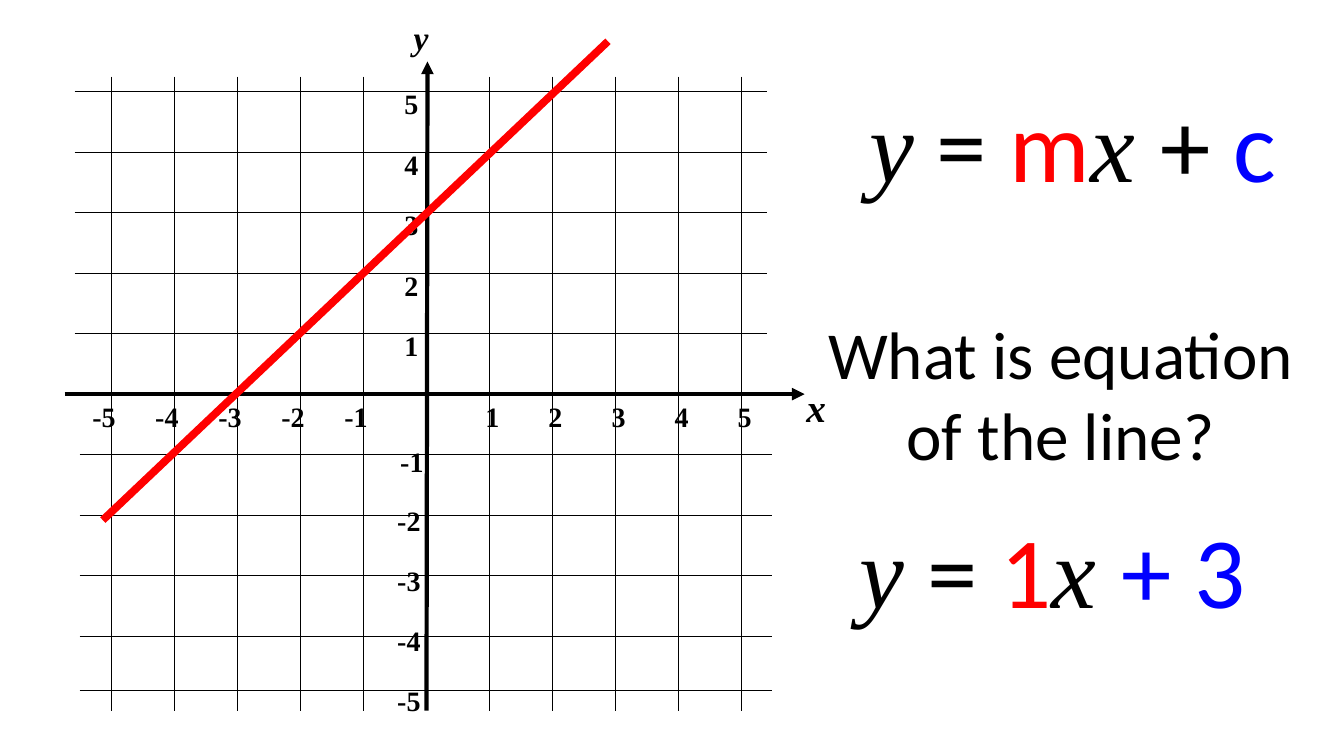
import pptx
import pptx.dml.color
import pptx.enum.shapes
import pptx.enum.text
import pptx.oxml.ns
import pptx.util
from lxml import etree

Inches = pptx.util.Inches
Pt = pptx.util.Pt
Align = pptx.enum.text.PP_ALIGN

BLACK = pptx.dml.color.RGBColor(0x00, 0x00, 0x00)
RED = pptx.dml.color.RGBColor(0xFF, 0x00, 0x00)
BLUE = pptx.dml.color.RGBColor(0x00, 0x00, 0xFF)

ORIGIN_X, ORIGIN_Y = 4.23, 3.91
STEP_X, STEP_Y = 0.625, 0.6


class GraphSlide:
    SANS = "Calibri"
    SERIF = "Times New Roman"

    def __init__(self, slide):
        self.slide = slide

    def line(self, start, end, width, color=BLACK, arrow=False):
        connector = self.slide.shapes.add_connector(
            pptx.enum.shapes.MSO_CONNECTOR.STRAIGHT,
            *(Inches(value) for value in (*start, *end)))
        connector.line.color.rgb = color
        connector.line.width = Pt(width)
        qn = pptx.oxml.ns.qn
        if arrow:
            etree.SubElement(connector.line._get_or_add_ln(),
                             qn("a:tailEnd"), type="triangle")
        etree.SubElement(connector._element.spPr, qn("a:effectLst"))

    def run(self, paragraph, text, size, color=BLACK, font=SANS,
            bold=False, italic=False):
        run = paragraph.add_run()
        run.text = text
        run.font.size = Pt(size)
        run.font.name = font
        run.font.color.rgb = color
        run.font.bold = bold
        run.font.italic = italic

    def text_box(self, left, top, width, height, align, inset=None):
        """Add a wrapping text box and return its first paragraph."""
        box = self.slide.shapes.add_textbox(
            Inches(left), Inches(top), Inches(width), Inches(height))
        frame = box.text_frame
        frame.word_wrap = True
        if inset is not None:
            frame.margin_left = frame.margin_right = Inches(inset)
            frame.margin_top = frame.margin_bottom = Inches(inset)
        frame.paragraphs[0].alignment = align
        return frame.paragraphs[0]

    def axis_label(self, text, left, top, width, height, size=20,
                   align=Align.LEFT, italic=False):
        paragraph = self.text_box(left, top, width, height, align, 0.04)
        self.run(paragraph, text, size, font=self.SERIF, bold=True, italic=italic)

    def equation(self, left, top, width, height, align, parts):
        """Add an equation from (text, colour) parts; variables are serif italic."""
        paragraph = self.text_box(left, top, width, height, align)
        for text, color in parts:
            variable = text.strip() in ("x", "y")
            self.run(paragraph, text, 72, color,
                     self.SERIF if variable else self.SANS, italic=variable)

    def question(self, text, left, top, width, height):
        title = self.slide.shapes.title
        title.left, title.top = Inches(left), Inches(top)
        title.width, title.height = Inches(width), Inches(height)
        frame = title.text_frame
        frame.word_wrap = True
        frame.auto_size = pptx.enum.text.MSO_AUTO_SIZE.NONE
        frame.vertical_anchor = pptx.enum.text.MSO_ANCHOR.TOP
        frame.paragraphs[0].alignment = Align.CENTER
        self.run(frame.paragraphs[0], text, 48)


def draw_grid(graph):
    graph.line((ORIGIN_X, 7.05), (ORIGIN_X + 0.01, 0.61), 3, arrow=True)
    graph.line((0.64, ORIGIN_Y), (7.98, ORIGIN_Y), 3, arrow=True)
    for n in (*range(-5, 0), *range(1, 6)):
        x = ORIGIN_X + n * STEP_X
        graph.line((x, 0.76), (x, 7.05), 0.25 if n > 0 else 0.75)
        y = 6.85 if n == -5 else ORIGIN_Y - n * STEP_Y
        left = 0.74 if n > 0 else 0.79
        graph.line((left, y), (left + 6.87, y), 0.75)


def draw_axis_labels(graph):
    for n in range(1, 6):
        graph.axis_label(str(n), 4.15 + n * STEP_X, 3.92, 0.24, 0.3)
        graph.axis_label(str(-n), 4 - n * STEP_X, 3.92, 0.66, 0.28)
        graph.axis_label(str(n), 3.97, 3.82 - n * STEP_Y, 0.24, 0.3)
        graph.axis_label(str(-n), 3.93 if n == 1 else 3.9,
                         3.77 + n * 0.595, 0.66, 0.3)
    graph.axis_label("y", 3.9, 0.13, 0.55, 0.37, 24, Align.CENTER, True)
    graph.axis_label("x", 7.82, 3.76, 0.55, 0.65, 28, Align.CENTER, True)


def main():
    presentation = pptx.Presentation()
    presentation.slide_width = Inches(13.33)
    presentation.slide_height = Inches(7.5)
    title_only = presentation.slide_layouts[5]
    graph = GraphSlide(presentation.slides.add_slide(title_only))

    draw_grid(graph)
    draw_axis_labels(graph)
    graph.line((1.02, 5.16), (6.03, 0.41), 5.5, RED)

    graph.equation(8.24, 0.76, 4.79, 1.31, Align.CENTER, [
        ("y", BLACK), (" = ", BLACK), ("m", RED),
        ("x ", BLACK), ("+ ", BLACK), ("c", BLUE)])
    graph.question("What is equation of the line?", 8.05, 3.05, 4.94, 1.72)
    graph.equation(8.43, 4.99, 4.17, 1.31, Align.LEFT, [
        ("y", BLACK), (" = ", BLACK), ("1", RED),
        ("x ", BLACK), ("+ 3", BLUE)])

    presentation.save("out.pptx")


if __name__ == "__main__":
    main()
